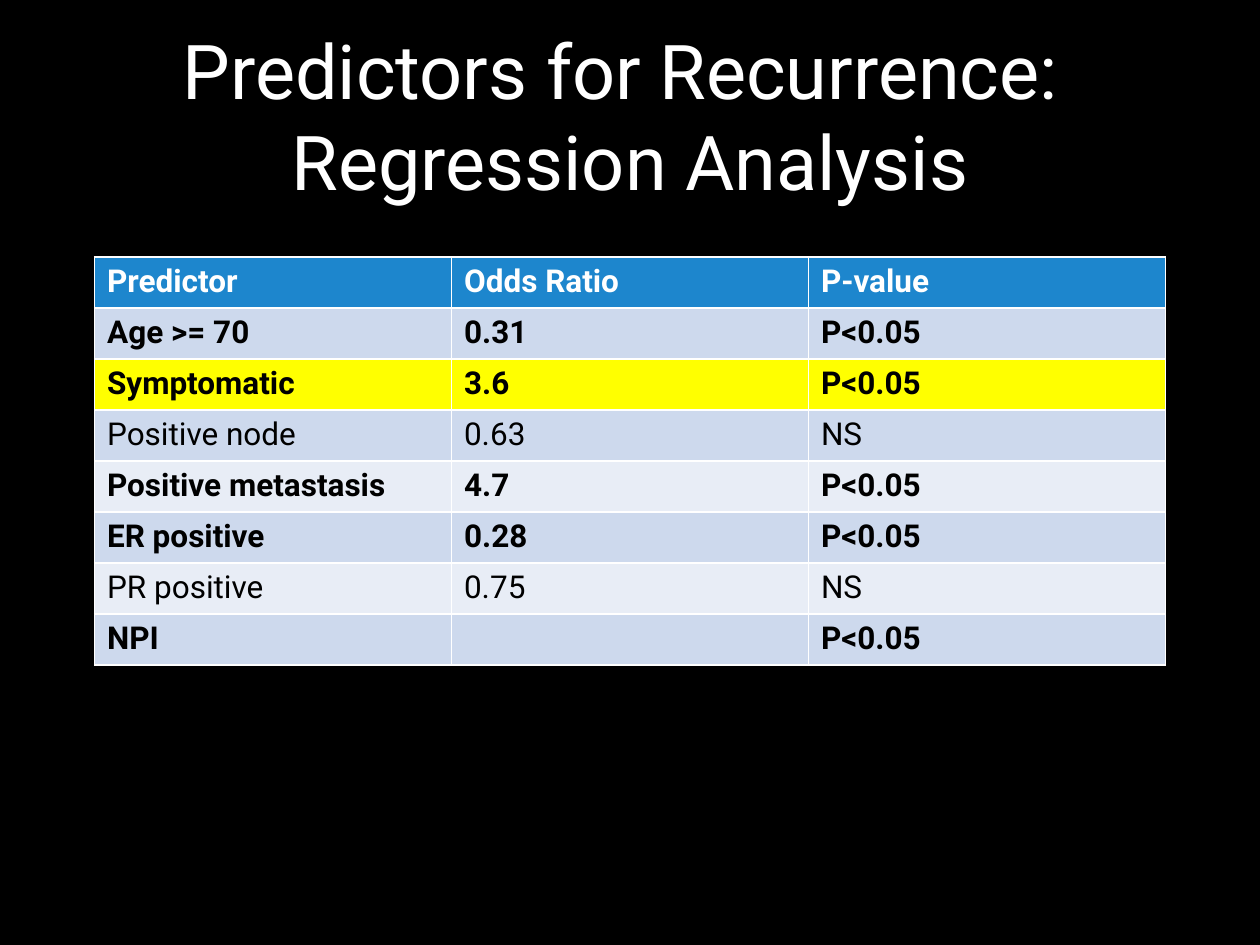
from pptx import Presentation
from pptx.dml.color import RGBColor
from pptx.enum.text import MSO_ANCHOR as Anchor, MSO_AUTO_SIZE as AutoSize, PP_ALIGN as Align
from pptx.util import Inches, Pt

TITLE = "Predictors for Recurrence: \vRegression Analysis"
HEADER = ("Predictor", "Odds Ratio", "P-value")
PREDICTORS = [
    ("Age >= 70", "0.31", "P<0.05"),
    ("Symptomatic", "3.6", "P<0.05"),
    ("Positive node", "0.63", "NS"),
    ("Positive metastasis", "4.7", "P<0.05"),
    ("ER positive", "0.28", "P<0.05"),
    ("PR positive", "0.75", "NS"),
    ("NPI", "", "P<0.05"),
]
HIGHLIGHTED = "Symptomatic"
BANDS = ("E8EDF6", "CDD9ED")
WIDTH, HEIGHT = Inches(10), Inches(7.5)
LEFT, CONTENT_WIDTH = int(WIDTH * 0.075), int(WIDTH * 0.85)


def color(value):
    return RGBColor.from_string(value)


def fill_solid(fill, value):
    fill.solid()
    fill.fore_color.rgb = color(value)


def format_text(frame, text_color, **values):
    for paragraph in frame.paragraphs:
        for run in paragraph.runs:
            run.font.color.rgb = color(text_color)
            for name, value in {"name": "Roboto", **values}.items():
                setattr(run.font, name, value)


def row_style(index, row):
    if index == 0:
        return "1D86CD", "FFFFFF", True
    fill = "FFFF00" if row[0] == HIGHLIGHTED else BANDS[index % 2]
    return fill, "000000", row[-1] != "NS"


def add_title(slide):
    title = slide.shapes.title
    place = {"left": LEFT, "top": Inches(0.13), "width": CONTENT_WIDTH, "height": Inches(1.56)}
    for name, value in place.items():
        setattr(title, name, value)
    frame = title.text_frame
    frame.text = TITLE
    frame.auto_size = AutoSize.NONE
    frame.vertical_anchor = Anchor.MIDDLE
    frame.paragraphs[0].alignment = Align.CENTER
    format_text(frame, "FFFFFF", size=Pt(43.2))


def add_predictor_table(slide):
    rows = [HEADER, *PREDICTORS]
    table = slide.shapes.add_table(
        len(rows), len(HEADER), LEFT, Inches(2.04), CONTENT_WIDTH, Inches(3.24)
    ).table
    for index, row in enumerate(rows):
        fill, text_color, bold = row_style(index, row)
        for column, text in enumerate(row):
            cell = table.cell(index, column)
            cell.text = text
            fill_solid(cell.fill, fill)
            format_text(cell.text_frame, text_color, size=Pt(18), bold=bold)


def main():
    presentation = Presentation()
    presentation.slide_width, presentation.slide_height = WIDTH, HEIGHT
    slide = presentation.slides.add_slide(presentation.slide_layouts[5])
    fill_solid(slide.background.fill, "000000")
    add_title(slide)
    add_predictor_table(slide)
    presentation.save("out.pptx")


if __name__ == "__main__":
    main()
